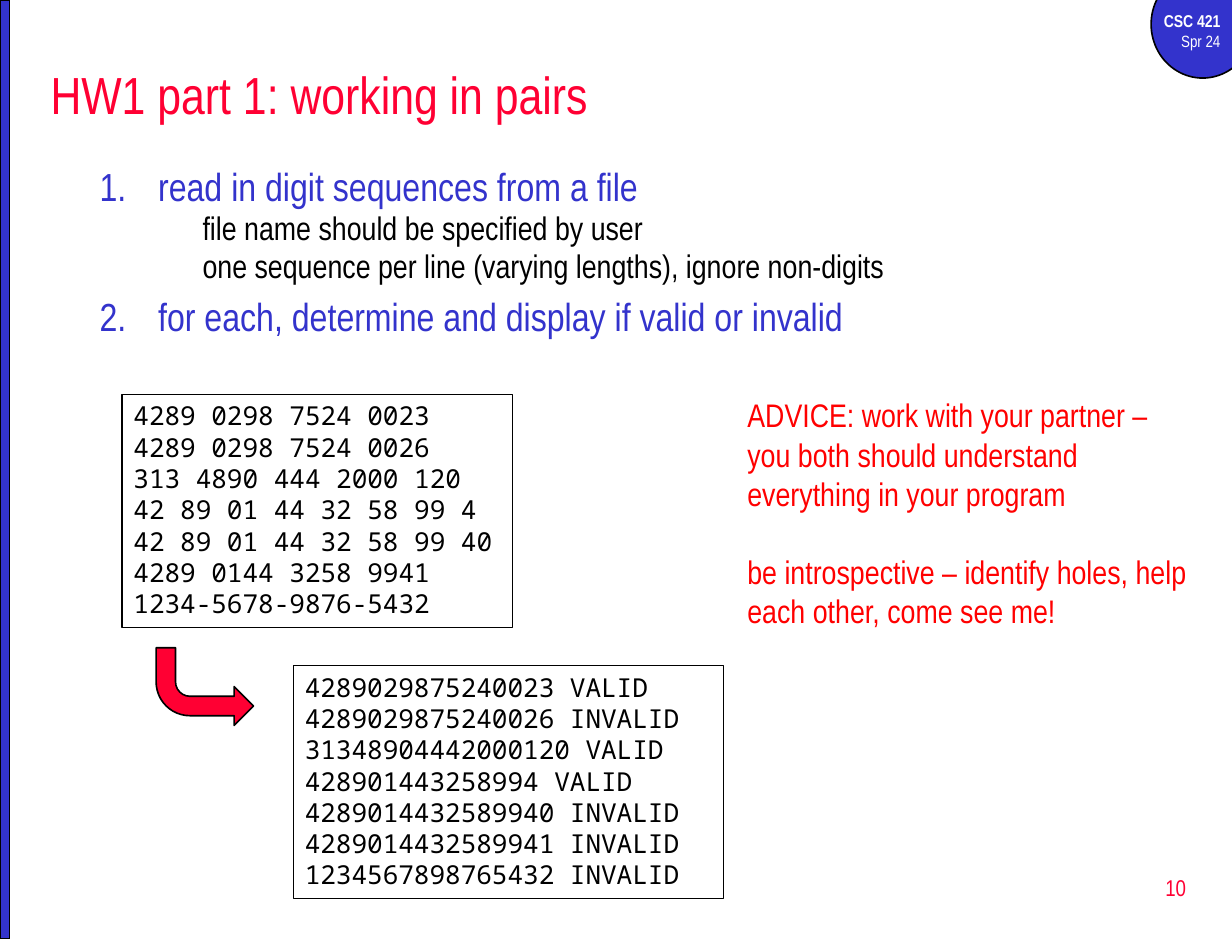
from lxml import etree
from pptx import Presentation
from pptx.dml.color import RGBColor
from pptx.enum.shapes import MSO_SHAPE
from pptx.enum.text import MSO_ANCHOR, MSO_AUTO_SIZE, PP_ALIGN
from pptx.oxml.ns import qn
from pptx.util import Cm, Pt

RECT, OVAL, BENT = MSO_SHAPE.RECTANGLE, MSO_SHAPE.OVAL, MSO_SHAPE.BENT_ARROW
LEFT, RIGHT = PP_ALIGN.LEFT, PP_ALIGN.RIGHT
TOP, MIDDLE = MSO_ANCHOR.TOP, MSO_ANCHOR.MIDDLE
FIXED = MSO_AUTO_SIZE.NONE
BLUE = RGBColor(0x33, 0x33, 0xCC)
ROSE = RGBColor(0xFF, 0x00, 0x33)
RED = RGBColor(0xFF, 0x00, 0x00)
BLACK = RGBColor(0x00, 0x00, 0x00)
WHITE = RGBColor(0xFF, 0xFF, 0xFF)
SANS, MONO = "Arial Narrow", "Noto Sans Mono"


def write(frame, lines, size, color, name=SANS, align=LEFT, anchor=TOP):
    """Fill a text frame with one paragraph per line."""
    look = {"word_wrap": True, "auto_size": FIXED, "vertical_anchor": anchor}
    for key, value in look.items():
        setattr(frame, key, value)
    frame.text = "\n".join(lines)
    for para in frame.paragraphs:
        para.alignment = align
        font = para.runs[0].font
        for key, value in {"size": Pt(size), "name": name, "bold": False}.items():
            setattr(font, key, value)
        font.color.rgb = color


def draw(kind, box, fill=None, line=None):
    """Add a preset shape; box is left, top, width, height in cm."""
    shape = slide.shapes.add_shape(kind, *map(Cm, box))
    shape.shadow.inherit = False
    if fill is None:
        shape.fill.background()
    else:
        shape.fill.solid()
        shape.fill.fore_color.rgb = fill
    if line is None:
        shape.line.fill.background()
    else:
        shape.line.color.rgb = BLACK
        shape.line.width = Pt(line)
    return shape


deck = Presentation()
deck.slide_width, deck.slide_height = Cm(26.67), Cm(20.32)
slide = deck.slides.add_slide(deck.slide_layouts[1])

# Course badge and side bar
draw(OVAL, (24.92, -0.64, 2.23, 2.33), BLUE, 1)
badge = slide.shapes.add_textbox(Cm(24.56), Cm(0.1), Cm(2.11), Cm(1.17))
write(badge.text_frame, ["CSC 421", "Spr 24"], 10, WHITE, align=RIGHT)
course = badge.text_frame.paragraphs[0].runs[0].font
course.bold, course.size = True, Pt(10.5)
draw(RECT, (0, 0, 0.21, 20.32), BLUE, 1)

# Title and task list
title, body = slide.placeholders
places = [(title, (0.84, 1.07, 25.2, 1.9)), (body, (1.9, 3.38, 24.18, 4.6))]
for holder, box in places:
    holder.left, holder.top, holder.width, holder.height = map(Cm, box)
write(title.text_frame, ["HW1 part 1: working in pairs"], 32, ROSE, anchor=MIDDLE)

tasks = [
    (0, "read in digit sequences from a file"),
    (2, "file name should be specified by user"),
    (2, "one sequence per line (varying lengths), ignore non-digits"),
    (0, "for each, determine and display if valid or invalid"),
]
write(body.text_frame, [text for _, text in tasks], 24, BLUE)
for para, (level, _) in zip(body.text_frame.paragraphs, tasks):
    para.level = level
    para.space_before = Pt(4.8)
    props = para._p.get_or_add_pPr()
    margin, indent = (Cm(2.23), 0) if level else (Cm(1.27), Cm(-1.27))
    props.set("marL", str(int(margin)))
    props.set("indent", str(int(indent)))
    if level:
        para.line_spacing = 0.8
        para.space_before = Pt(4)
        font = para.runs[0].font
        font.size, font.color.rgb = Pt(20), BLACK
        etree.SubElement(props, qn("a:buNone"))
    else:
        etree.SubElement(props, qn("a:buFont"), typeface="+mj-lt")
        etree.SubElement(props, qn("a:buAutoNum"), type="arabicPeriod")

# Page number
page = slide.shapes.add_textbox(Cm(20.37), Cm(18.52), Cm(5.56), Cm(1.35))
write(page.text_frame, ["10"], 14, ROSE, align=RIGHT, anchor=MIDDLE)

# Advice
advice = draw(RECT, (15.93, 8.43, 10.16, 5.38), WHITE)
write(advice.text_frame, [
    "ADVICE: work with your partner – you both should understand "
    "everything in your program",
    "be introspective – identify holes, help each other, come see me!",
], 20, RED)
advice.text_frame.paragraphs[1].space_before = Pt(24)

# Arrow from input to output
arrow = draw(BENT, (3.38, 14.02, 2.11, 1.68), ROSE, 1)
arrow._element.spPr.find(qn("a:xfrm")).set("flipV", "1")

# Sample input and output
samples = [
    ((2.64, 8.53, 8.46, 5.05), [
        "4289 0298 7524 0023",
        "4289 0298 7524 0026",
        "313 4890 444 2000 120",
        "42 89 01 44 32 58 99 4",
        "42 89 01 44 32 58 99 40",
        "4289 0144 3258 9941",
        "1234-5678-9876-5432",
    ]),
    ((6.35, 14.4, 9.32, 5.05), [
        "4289029875240023 VALID",
        "4289029875240026 INVALID",
        "31348904442000120 VALID",
        "428901443258994 VALID",
        "4289014432589940 INVALID",
        "4289014432589941 INVALID",
        "1234567898765432 INVALID",
    ]),
]
for box, lines in samples:
    write(draw(RECT, box, line=0.75).text_frame, lines, 16, BLACK, MONO)

deck.save("out.pptx")
